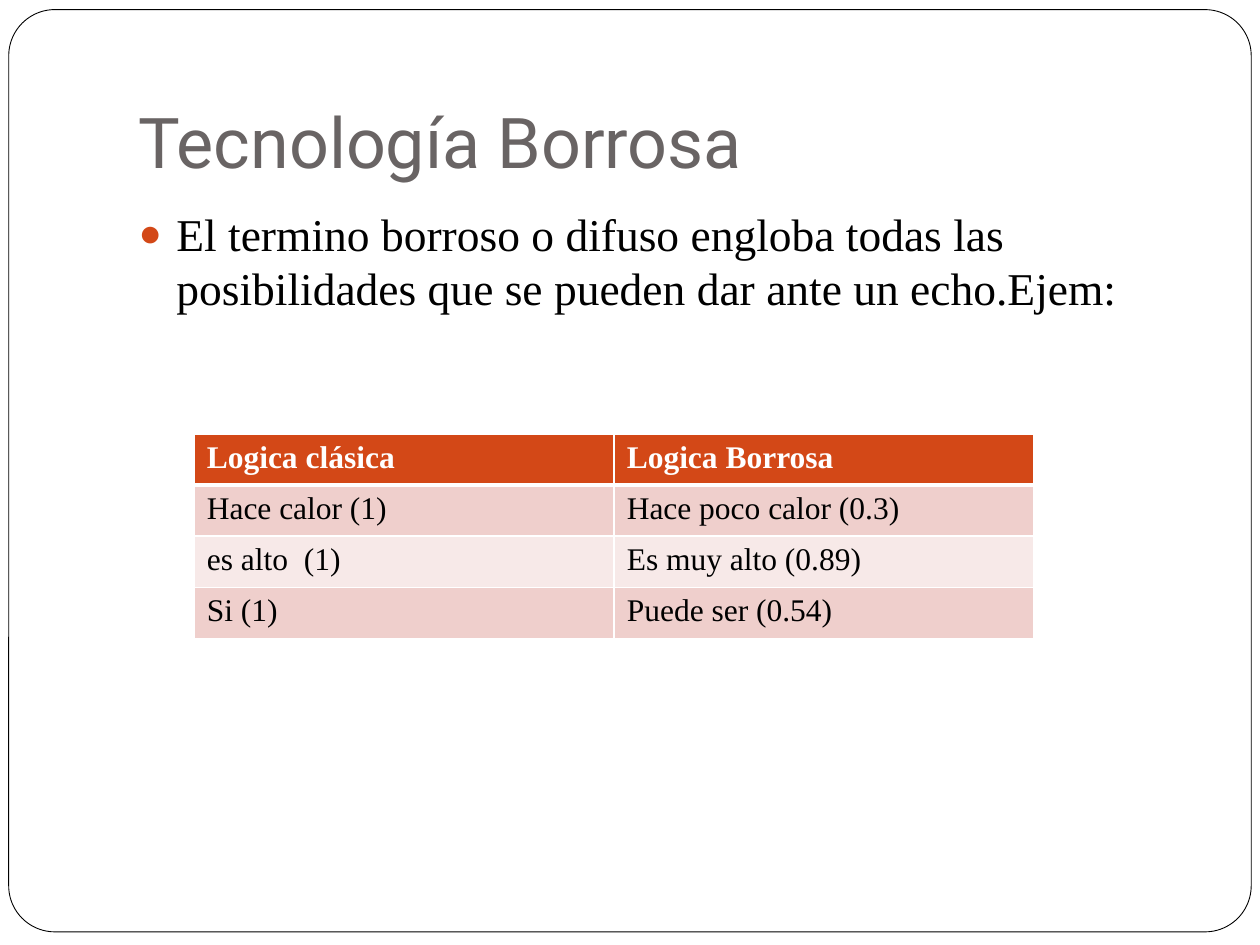
from lxml import etree
from pptx import Presentation
from pptx.dml.color import RGBColor
from pptx.enum.shapes import MSO_SHAPE
from pptx.enum.text import MSO_ANCHOR, MSO_AUTO_SIZE, PP_ALIGN
from pptx.oxml.ns import qn
from pptx.util import Pt

ROUND = MSO_SHAPE.ROUNDED_RECTANGLE
TOP, BOTTOM = MSO_ANCHOR.TOP, MSO_ANCHOR.BOTTOM
FIXED, LEFT = MSO_AUTO_SIZE.NONE, PP_ALIGN.LEFT

BLACK = RGBColor(0x00, 0x00, 0x00)
WHITE = RGBColor(0xFF, 0xFF, 0xFF)
GRAY = RGBColor(0x69, 0x64, 0x64)
ORANGE = RGBColor(0xD3, 0x48, 0x17)
ROSE = RGBColor(0xEF, 0xCF, 0xCC)
PALE = RGBColor(0xF7, 0xE9, 0xE8)
SERIF = "Times New Roman"

ROWS = [
    ("Logica clásica", "Logica Borrosa"),
    ("Hace calor (1)", "Hace poco calor (0.3)"),
    ("es alto  (1)", "Es muy alto (0.89)"),
    ("Si (1)", "Puede ser (0.54)"),
]


def style(frame, face, size, color, bold=False):
    for par in frame.paragraphs:
        par.alignment = LEFT
        for run in par.runs:
            font = run.font
            font.name, font.size, font.bold = face, Pt(size), bold
            font.color.rgb = color


def border(cell, side, width):
    line = etree.SubElement(cell._tc.get_or_add_tcPr(), qn(f"a:ln{side}"), w=str(Pt(width)))
    fill = etree.SubElement(line, qn("a:solidFill"))
    etree.SubElement(fill, qn("a:srgbClr"), val=str(WHITE))


deck = Presentation()
deck.slide_width, deck.slide_height = Pt(720), Pt(540)
slide = deck.slides.add_slide(deck.slide_layouts[1])
shapes = slide.shapes

# Rounded frame, behind everything
frame = shapes.add_shape(ROUND, Pt(5), Pt(5.5), Pt(710), Pt(527))
frame.adjustments[0] = 0.05
frame.shadow.inherit = False
frame.fill.solid()
frame.fill.fore_color.rgb = WHITE
frame.line.color.rgb = BLACK
frame.line.width = Pt(0.5)
shapes._spTree.insert(2, frame._element)

# Title
title = shapes.title
title.left, title.top, title.width, title.height = Pt(72), Pt(21.6), Pt(612), Pt(90)
text = title.text_frame
text.text = "Tecnología Borrosa"
text.auto_size = FIXED
text.vertical_anchor = BOTTOM
text.margin_bottom = Pt(7.2)
style(text, "Roboto", 40, GRAY)

# Bulleted body
body = slide.placeholders[1]
body.left, body.top, body.width, body.height = Pt(72), Pt(114), Pt(612), Pt(360)
text = body.text_frame
text.text = ("El termino borroso o difuso engloba todas las "
             "posibilidades que se pueden dar ante un echo.Ejem:")
text.auto_size = FIXED
text.vertical_anchor = TOP
style(text, SERIF, 26, BLACK)
par = text.paragraphs[0]
par.space_before = Pt(5.8)
props = par._p.get_or_add_pPr()
props.set("marL", str(Pt(21.6)))
props.set("indent", str(-Pt(21.6)))
tint = etree.SubElement(props, qn("a:buClr"))
etree.SubElement(tint, qn("a:srgbClr"), val=str(ORANGE))
etree.SubElement(props, qn("a:buSzPct"), val="85000")
etree.SubElement(props, qn("a:buChar"), char="●")

# Comparison table
table = shapes.add_table(len(ROWS), 2, Pt(111), Pt(248), Pt(480), Pt(116.8)).table
for r, row in enumerate(ROWS):
    table.rows[r].height = Pt(29.2)
    head = r == 0
    for c, words in enumerate(row):
        cell = table.cell(r, c)
        cell.text = words
        style(cell.text_frame, SERIF, 18, WHITE if head else BLACK, head)
        for side in "LRTB":
            thick = (r, side) in ((0, "B"), (1, "T"))
            border(cell, side, 3 if thick else 1)
        cell.fill.solid()
        cell.fill.fore_color.rgb = ORANGE if head else ROSE if r % 2 else PALE

deck.save("out.pptx")
